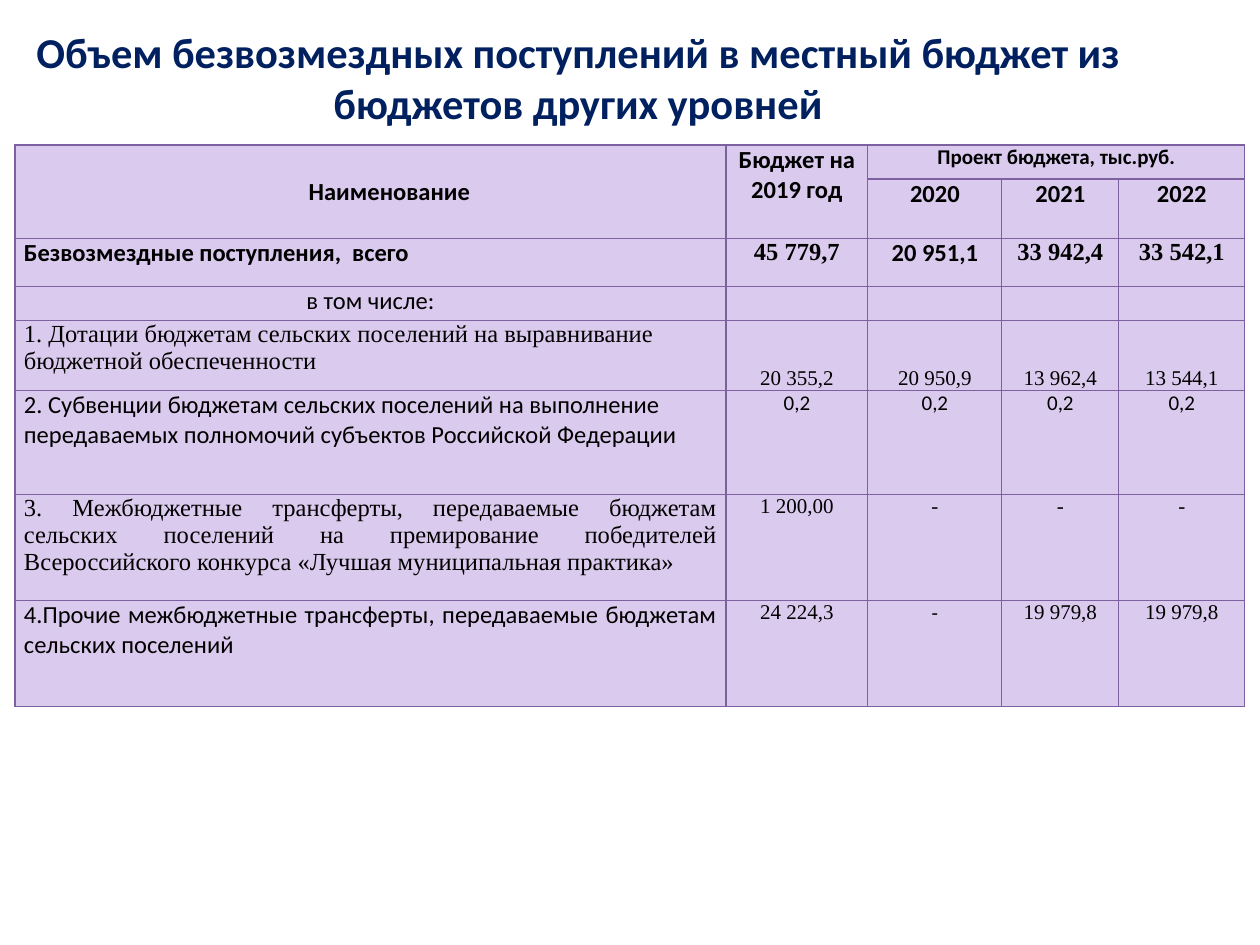
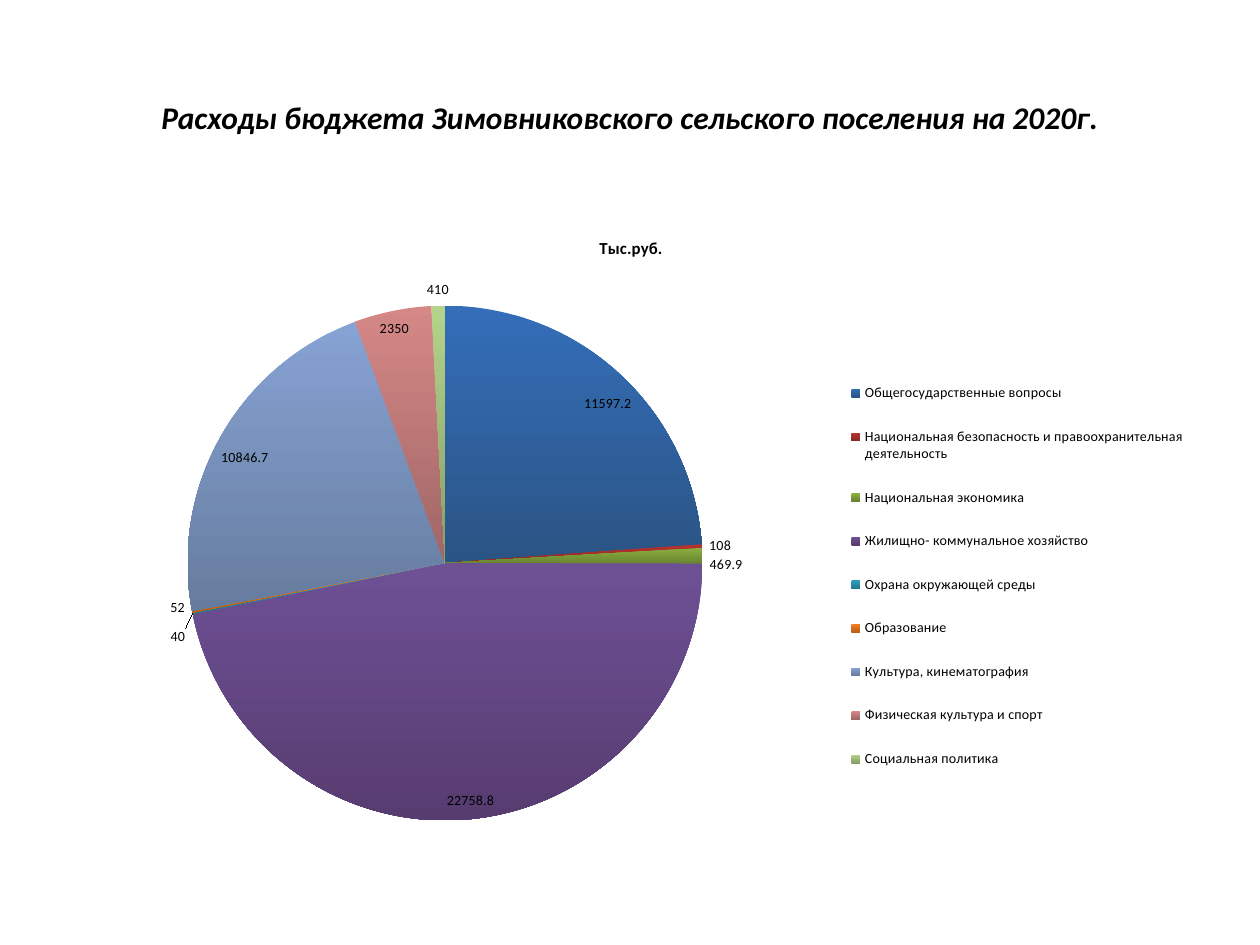
from lxml import etree
from pptx import Presentation
from pptx.chart.data import CategoryChartData
from pptx.dml.color import RGBColor
from pptx.enum.chart import XL_CHART_TYPE as ChartType
from pptx.enum.chart import XL_LABEL_POSITION as LabelAt
from pptx.enum.chart import XL_LEGEND_POSITION as LegendAt
from pptx.enum.text import MSO_ANCHOR as Anchor
from pptx.enum.text import MSO_AUTO_SIZE as AutoSize
from pptx.enum.text import PP_ALIGN as Align
from pptx.oxml import parse_xml
from pptx.oxml.ns import nsdecls, qn
from pptx.util import Pt

PX = 914400 / 126
SANS, SERIF = "Calibri", "Times New Roman"
INK, NAVY, LILAC, VIOLET = "000000", "002060", "DACAED", "7D60A0"
TITLE_ONLY = 5

COLUMNS = [711, 142, 134, 117, 126]
ROWS = [34, 59, 48, 34, 70, 104, 106, 106]
YEARS = ["2020", "2021", "2022"]
TRANSFERS = [
    ("1. Дотации бюджетам сельских поселений на выравнивание бюджетной обеспеченности",
     SERIF, Align.LEFT, ["20 355,2", "20 950,9", "13 962,4", "13 544,1"], [SERIF] * 4, Anchor.BOTTOM),
    ("2. Субвенции бюджетам сельских поселений на выполнение передаваемых полномочий "
     "субъектов Российской Федерации",
     SANS, Align.LEFT, ["0,2"] * 4, [SANS] * 4, Anchor.TOP),
    ("3. Межбюджетные трансферты, передаваемые бюджетам сельских поселений на премирование "
     "победителей Всероссийского конкурса «Лучшая муниципальная практика»",
     SERIF, Align.JUSTIFY, ["1 200,00", "-", "-", "-"], [SERIF] * 4, Anchor.TOP),
    ("4.Прочие межбюджетные трансферты, передаваемые бюджетам сельских поселений",
     SANS, Align.JUSTIFY, ["24 224,3", "-", "19 979,8", "19 979,8"],
     [SERIF, SANS, SERIF, SERIF], Anchor.TOP),
]
EXPENSES = [
    ("Общегосударственные вопросы", 11597.2, "346EB9", "2A5484"),
    ("Национальная безопасность и правоохранительная деятельность", 108, "B83431", "8A2725"),
    ("Национальная экономика", 469.9, "8AAF3F", "6A8431"),
    ("Жилищно- коммунальное хозяйство", 22758.8, "6E5095", "573C70"),
    ("Охрана окружающей среды", 40, "2F9FBD", "23788E"),
    ("Образование", 52, "F57F22", "B85F19"),
    ("Культура, кинематография", 10846.7, "87A3D4", "667C9E"),
    ("Физическая культура и спорт", 2350, "D58886", "A06666"),
    ("Социальная политика", 410, "B4D38A", "879E68"),
]


def px(length):
    return round(length * PX)


def paint(hex_colour):
    return RGBColor.from_string(hex_colour)


def set_all(target, values):
    for key, value in values.items():
        setattr(target, key, value)


def style(font, size, name=SANS, colour=INK, bold=False, italic=False):
    set_all(font, {"size": Pt(size), "name": name, "bold": bold, "italic": italic})
    font.color.rgb = paint(colour)


def place_title(slide, box, wording, anchor, margins, **look):
    title = slide.shapes.title
    set_all(title, dict(zip(("left", "top", "width", "height"), map(px, box))))
    frame = title.text_frame
    frame.text = wording
    set_all(frame, {"auto_size": AutoSize.NONE, "word_wrap": True, "vertical_anchor": anchor,
                    "margin_top": px(margins), "margin_bottom": px(margins)})
    heading = frame.paragraphs[0]
    heading.alignment = Align.CENTER
    style(heading.runs[0].font, **look)


def prepare_cell(cell):
    set_all(cell, {"margin_left": px(9), "margin_right": px(9), "margin_top": 0, "margin_bottom": 0})
    cell.text_frame.paragraphs[0]._p.get_or_add_endParaRPr().set("sz", "1200")
    borders = cell._tc.get_or_add_tcPr()
    for side in "LRTB":
        borders.append(parse_xml(
            f'<a:ln{side} {nsdecls("a")} w="{Pt(0.75)}"><a:solidFill>'
            f'<a:srgbClr val="{VIOLET}"/></a:solidFill></a:ln{side}>'))
    cell.fill.solid()
    cell.fill.fore_color.rgb = paint(LILAC)


def write_cell(cell, wording, align=Align.CENTER, anchor=Anchor.TOP, size=14, **look):
    cell.vertical_anchor = anchor
    entry = cell.text_frame.paragraphs[0]
    entry.alignment = align
    run = entry.add_run()
    run.text = wording
    style(run.font, size, **look)
    return entry


def write_header(grid):
    grid.cell(0, 0).merge(grid.cell(1, 0))
    grid.cell(0, 1).merge(grid.cell(1, 1))
    grid.cell(0, 2).merge(grid.cell(0, 4))
    name = write_cell(grid.cell(0, 0), "Наименование", anchor=Anchor.MIDDLE, bold=True)
    name._p.get_or_add_pPr().set("indent", str(px(38)))
    write_cell(grid.cell(0, 1), "Бюджет на 2019 год", bold=True)
    write_cell(grid.cell(0, 2), "Проект бюджета, тыс.руб.", size=12, bold=True)
    for column, year in enumerate(YEARS, 2):
        write_cell(grid.cell(1, column), year, bold=True)


def write_totals(grid):
    write_cell(grid.cell(2, 0), "Безвозмездные поступления,  всего", Align.LEFT, bold=True)
    totals = zip(["45 779,7", "20 951,1", "33 942,4", "33 542,1"], [SERIF, SANS, SERIF, SERIF])
    for column, (total, face) in enumerate(totals, 1):
        write_cell(grid.cell(2, column), total, name=face, bold=True)
    write_cell(grid.cell(3, 0), "в том числе:")


def place_table(slide, left, top):
    grid = slide.shapes.add_table(len(ROWS), len(COLUMNS), px(left), px(top),
                                  px(sum(COLUMNS)), px(sum(ROWS))).table
    for column, width in zip(grid.columns, COLUMNS):
        column.width = px(width)
    for row, height in zip(grid.rows, ROWS):
        row.height = px(height)
    for cell in grid.iter_cells():
        prepare_cell(cell)
    write_header(grid)
    write_totals(grid)
    for row, (source, face, align, sums, sum_faces, anchor) in enumerate(TRANSFERS, 4):
        write_cell(grid.cell(row, 0), source, align, name=face)
        for column, (amount, sum_face) in enumerate(zip(sums, sum_faces), 1):
            write_cell(grid.cell(row, column), amount, anchor=anchor, size=12, name=sum_face)


def manual_layout(box, chart_size, inner=False):
    layout = parse_xml(f'<c:layout {nsdecls("c")}><c:manualLayout/></c:layout>')
    settings = [("layoutTarget", "inner")] if inner else []
    settings += [("xMode", "edge"), ("yMode", "edge")]
    settings += [(key, f"{length / chart_size[i % 2]:.3f}")
                 for i, (key, length) in enumerate(zip("xywh", box))]
    for key, value in settings:
        etree.SubElement(layout[0], qn(f"c:{key}")).set("val", value)
    return layout


def replace_layout(parent, layout, position):
    for old in parent.findall(qn("c:layout")):
        parent.remove(old)
    parent.insert(position, layout)


def place_pie(slide, left, top, width, height):
    expenses = CategoryChartData()
    expenses.categories = [name for name, *_ in EXPENSES]
    expenses.add_series("Тыс.руб.", [amount for _, amount, *_ in EXPENSES])
    chart = slide.shapes.add_chart(ChartType.PIE, *map(px, (left, top, width, height)), expenses).chart
    style(chart.font, 8)
    chart.has_title = True
    chart.chart_title.text_frame.text = "Тыс.руб."
    style(chart.chart_title.text_frame.paragraphs[0].runs[0].font, 9.6, bold=True)
    chart.has_legend = True
    set_all(chart.legend, {"position": LegendAt.RIGHT, "include_in_layout": False})
    replace_layout(chart.legend._element, manual_layout((784, 144, 340, 436), (width, height)), 1)

    pie = chart.plots[0]
    set_all(pie, {"vary_by_categories": True, "has_data_labels": True})
    labels = pie.data_labels
    set_all(labels, {"show_value": True, "show_percentage": False, "position": LabelAt.BEST_FIT,
                     "number_format": "General", "number_format_is_linked": False})
    style(labels.font, 8)
    leaders = labels._element.find(qn("c:showLeaderLines"))
    if leaders is None:
        leaders = etree.SubElement(labels._element, qn("c:showLeaderLines"))
    leaders.set("val", "1")
    replace_layout(pie._element.getparent(),
                   manual_layout((124, 91, 515, 516), (width, height), inner=True), 0)
    for index, (_, _, light, dark) in enumerate(EXPENSES):
        sector = pie.series[0].points[index].format
        sector.fill.gradient()
        sector.fill.gradient_angle = 270
        for stop, shade in zip(sector.fill.gradient_stops, (light, dark)):
            stop.color.rgb = paint(shade)
        sector.line.fill.background()


def build_receipts(deck):
    slide = deck.slides.add_slide(deck.slide_layouts[TITLE_ONLY])
    place_title(slide, (11, 26, 1134, 127),
                "Объем безвозмездных поступлений в местный бюджет из бюджетов других уровней",
                Anchor.TOP, 0, size=24.3, colour=NAVY, bold=True)
    place_table(slide, 15, 145)


def build_expenses(deck):
    slide = deck.slides.add_slide(deck.slide_layouts[TITLE_ONLY])
    place_title(slide, (63, 38, 1134, 158),
                "Расходы бюджета Зимовниковского сельского поселения на 2020г.",
                Anchor.MIDDLE, 6, size=18, bold=True, italic=True)
    place_pie(slide, 64, 214, 1134, 624)


def main():
    deck = Presentation()
    set_all(deck, {"slide_width": px(1260), "slide_height": px(945)})
    build_receipts(deck)
    build_expenses(deck)
    deck.save("out.pptx")


if __name__ == "__main__":
    main()
